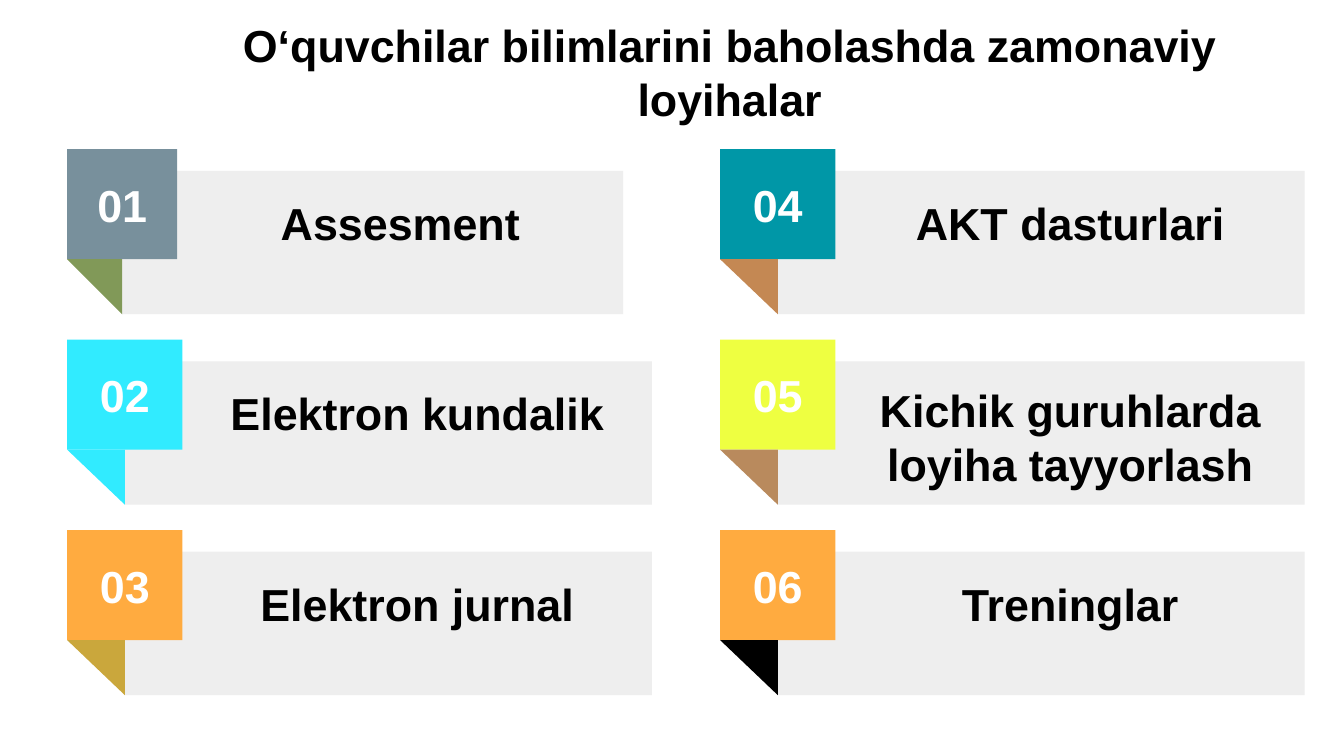
import pptx
import pptx.dml.color
import pptx.enum.shapes
import pptx.enum.text
import pptx.util

Cm = pptx.util.Cm
SHAPE = pptx.enum.shapes.MSO_SHAPE

TITLE = "O‘quvchilar bilimlarini baholashda zamonaviy loyihalar"
ONE_LINE = {"inset": 0.5, "drop": 0.93, "height": 0.91}
TWO_LINES = {"inset": 0.11, "drop": 0.53, "height": 2.62}
FULL, NARROW = (2.18, 9.96), (2.08, 9.47)  # tag width, bar width

# label, tag colour, fold colour, widths, label placement
CARDS = [
    ("Assesment", "78909C", "819958", NARROW, ONE_LINE),
    ("Elektron kundalik", "31EBFF", "31EBFF", FULL, ONE_LINE),
    ("Elektron jurnal", "FFAB40", "CAA73C", FULL, ONE_LINE),
    ("AKT dasturlari", "0097A7", "C48853", FULL, ONE_LINE),
    ("Kichik guruhlarda loyiha tayyorlash", "EEFF41", "B98A5D", FULL, TWO_LINES),
    ("Treninglar", "FFAB40", "000000", FULL, ONE_LINE),
]
ROWS = 3
COLUMN_LEFTS = (1.27, 13.61)
TOP, ROW_STEP = 2.82, 3.6
TAG_HEIGHT, FOLD_HEIGHT, BAR_DROP = 2.08, 1.04, 0.41
BAR_COLOUR, BLACK, WHITE = "EEEEEE", "000000", "FFFFFF"

FRAME_FORMAT = {
    "word_wrap": True,
    "vertical_anchor": pptx.enum.text.MSO_ANCHOR.MIDDLE,
    "margin_left": Cm(0.25),
    "margin_right": Cm(0.25),
    "margin_top": Cm(0.25),
    "margin_bottom": Cm(0.25),
}
FONT_FORMAT = {"name": "Arial", "size": pptx.util.Pt(24), "bold": True}


def colour(value):
    return pptx.dml.color.RGBColor.from_string(value)


def write(box, text, text_colour):
    frame = box.text_frame
    for name, value in FRAME_FORMAT.items():
        setattr(frame, name, value)
    para = frame.paragraphs[0]
    para.alignment = pptx.enum.text.PP_ALIGN.CENTER
    span = para.add_run()
    span.text = text
    for name, value in FONT_FORMAT.items():
        setattr(span.font, name, value)
    span.font.color.rgb = colour(text_colour)


def add_block(shapes, kind, place, fill):
    block = shapes.add_shape(kind, *map(Cm, place))
    block.shadow.inherit = False
    block.fill.solid()
    block.fill.fore_color.rgb = colour(fill)
    block.line.fill.background()
    return block


def add_label(shapes, place, text):
    write(shapes.add_textbox(*map(Cm, place)), text, BLACK)


def add_card(page, index, card):
    label, tag_colour, fold_colour, (tag_width, bar_width), fit = card
    column, row = divmod(index, ROWS)
    left, top = COLUMN_LEFTS[column], TOP + row * ROW_STEP
    fold_width = tag_width / 2
    bar_left = left + fold_width
    bar_height = TAG_HEIGHT + FOLD_HEIGHT - BAR_DROP
    label_left = left + tag_width + fit["inset"]
    label_width = bar_left + bar_width - fit["inset"] - label_left

    shapes = page.shapes.add_group_shape().shapes
    add_block(shapes, SHAPE.RECTANGLE,
              (bar_left, top + BAR_DROP, bar_width, bar_height), BAR_COLOUR)
    tag = add_block(shapes, SHAPE.RECTANGLE,
                    (left, top, tag_width, TAG_HEIGHT), tag_colour)
    write(tag, f"{index + 1:02}", WHITE)
    fold = add_block(shapes, SHAPE.RIGHT_TRIANGLE,
                     (left, top + TAG_HEIGHT, fold_width, FOLD_HEIGHT), fold_colour)
    fold.rotation = 180
    add_label(shapes, (label_left, top + fit["drop"], label_width, fit["height"]), label)


def main():
    deck = pptx.Presentation()
    deck.slide_width, deck.slide_height = Cm(25.4), Cm(14.29)
    page = deck.slides.add_slide(deck.slide_layouts[6])
    add_label(page.shapes, (3.12, 0.41, 21.34, 1.9), TITLE)
    for index, card in enumerate(CARDS):
        add_card(page, index, card)
    deck.save("out.pptx")


if __name__ == "__main__":
    main()
